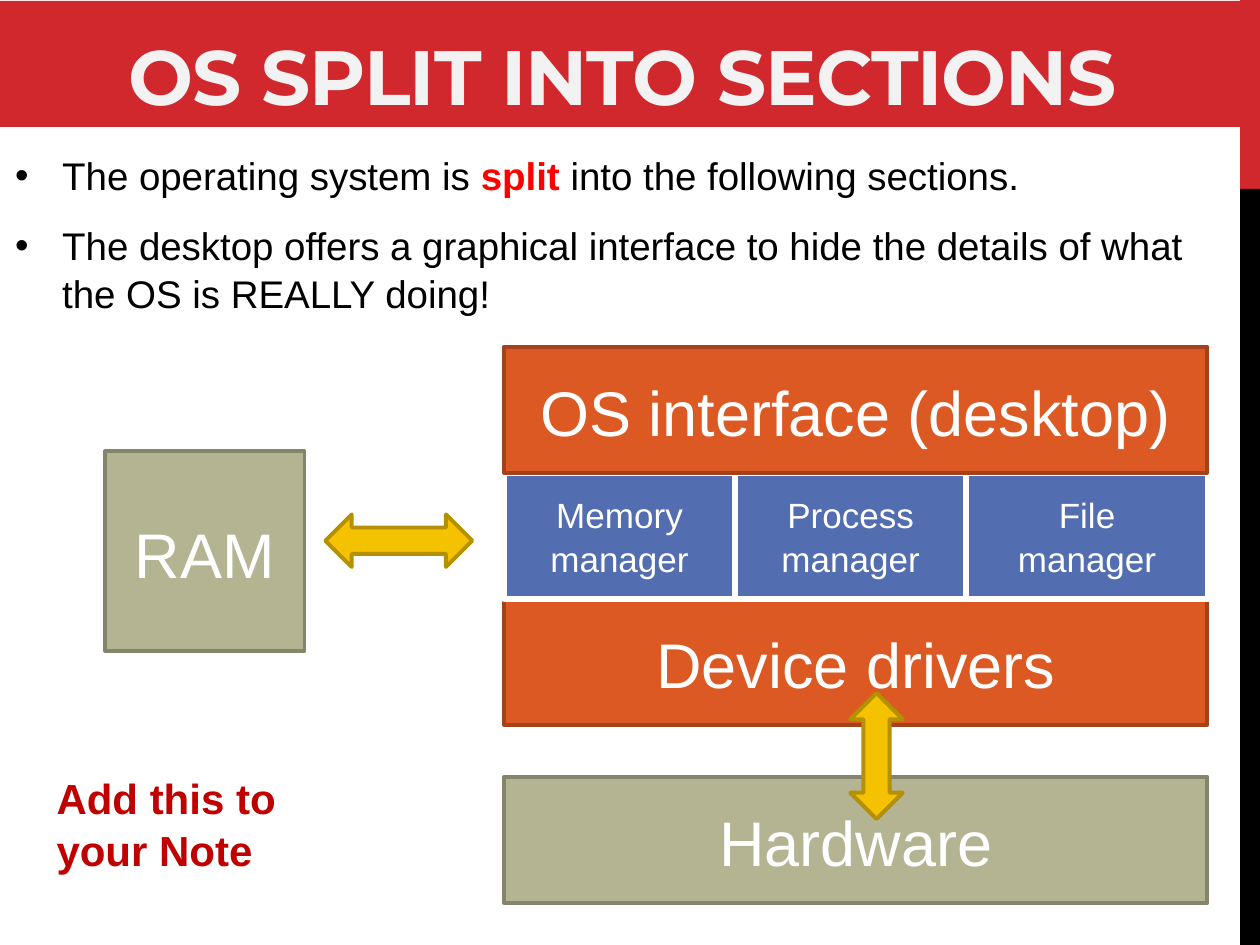
from pptx import Presentation
from pptx.dml.color import RGBColor
from pptx.enum.shapes import MSO_SHAPE
from pptx.enum.text import MSO_ANCHOR, MSO_AUTO_SIZE, PP_ALIGN
from pptx.util import Cm, Pt

RECT = MSO_SHAPE.RECTANGLE
ARROW = MSO_SHAPE.LEFT_RIGHT_ARROW
CENTER, LEFT = PP_ALIGN.CENTER, PP_ALIGN.LEFT
MIDDLE, TOP, BOTTOM = MSO_ANCHOR.MIDDLE, MSO_ANCHOR.TOP, MSO_ANCHOR.BOTTOM
NO_FIT = MSO_AUTO_SIZE.NONE

COLORS = {
    "red": "D1282E", "black": "000000", "white": "FFFFFF", "title": "F2F2F2",
    "split": "FF0000", "note": "C00000",
    "sage": "B4B392", "sage_line": "85846C",
    "orange": "DC5924", "orange_line": "A3421B",
    "blue": "526DB0", "gold": "F5C201", "gold_line": "B59001",
}

# Stack of operating system layers, in cm
STACK_X, STACK_Y, STACK_W, ROW_H = 10.16, 6.99, 14.18, 2.54
MANAGER_W = 4.66


def rgb(name):
    return RGBColor.from_string(COLORS[name])


def place(sp, x, y, w, h):
    sp.left, sp.top, sp.width, sp.height = Cm(x), Cm(y), Cm(w), Cm(h)


def add_run(p, text, size, color, bold=False, font="Arial"):
    r = p.add_run()
    r.text = text
    r.font.size, r.font.name, r.font.bold = Pt(size), font, bold
    r.font.color.rgb = rgb(color)
    return r


def add_paragraph(tf, first, align=LEFT, after=0, spacing=1.05):
    p = tf.paragraphs[0] if first else tf.add_paragraph()
    p.alignment = align
    p.line_spacing = spacing
    p.space_before, p.space_after = Pt(0), Pt(after)
    return p


def add_box(s, at, fill, line=None, lines=(), size=36, line_width=2.25, kind=RECT):
    sp = s.shapes.add_shape(kind, *[Cm(v) for v in at])
    sp.shadow.inherit = False
    sp.fill.solid()
    sp.fill.fore_color.rgb = rgb(fill)
    if line:
        sp.line.color.rgb = rgb(line)
        sp.line.width = Pt(line_width)
    else:
        sp.line.fill.background()
    tf = sp.text_frame
    tf.word_wrap, tf.vertical_anchor = True, MIDDLE
    for i, text in enumerate(lines):
        add_run(add_paragraph(tf, i == 0, CENTER), text, size, "white")
    return sp


def add_title(s, text):
    sp = s.shapes.title
    place(sp, 0, 0.02, 25.1, 2.54)
    sp.fill.solid()
    sp.fill.fore_color.rgb = rgb("red")
    tf = sp.text_frame
    tf.auto_size, tf.vertical_anchor = NO_FIT, BOTTOM
    p = add_paragraph(tf, True, CENTER, spacing=1.0)
    r = add_run(p, text, 44, "title", True, "Montserrat")
    r.font._element.set("spc", "-60")


def add_bullets(s, items):
    sp = s.placeholders[1]
    place(sp, 0.05, 2.9, 25.04, 3.5)
    tf = sp.text_frame
    tf.auto_size, tf.vertical_anchor = NO_FIT, TOP
    for i, runs in enumerate(items):
        p = add_paragraph(tf, i == 0, after=12)
        pPr = p._p.get_or_add_pPr()
        pPr.set("marL", str(Cm(0.95)))
        pPr.set("indent", str(-Cm(0.95)))
        for text, color, bold in runs:
            add_run(p, text, 22, color, bold)


def add_note(s, text):
    tf = s.shapes.add_textbox(Cm(0.89), Cm(15.39), Cm(6.5), Cm(2.31)).text_frame
    tf.word_wrap = True
    add_run(add_paragraph(tf, True), text, 24, "note", True)


def main():
    prs = Presentation()
    prs.slide_width, prs.slide_height = Cm(25.4), Cm(19.05)
    s = prs.slides.add_slide(prs.slide_layouts[1])

    # Side bar, title and bullets
    add_box(s, (25, 0, 0.4, 3.81), "red")
    add_box(s, (25, 3.81, 0.4, 15.24), "black")
    add_title(s, "OS SPLIT INTO SECTIONS")
    add_bullets(s, [
        [("The operating system is ", "black", False),
         ("split", "split", True),
         (" into the following sections.", "black", False)],
        [("The desktop offers a graphical interface to hide the details "
          "of what the OS is REALLY doing!", "black", False)],
    ])

    # Hardware and the layers above it
    add_box(s, (STACK_X, 15.66, STACK_W, ROW_H), "sage", "sage_line", ["Hardware"])
    add_box(s, (STACK_X, STACK_Y + 2 * ROW_H, STACK_W, ROW_H),
            "orange", "orange_line", ["Device drivers"])
    managers = [["Memory manager"], ["Process", "manager"], ["File", "manager"]]
    for i, lines in enumerate(managers):
        width = 4.87 if i == 2 else MANAGER_W
        add_box(s, (STACK_X + i * MANAGER_W, STACK_Y + ROW_H, width, ROW_H),
                "blue", "white", lines, 20, 3.25)
    add_box(s, (STACK_X, STACK_Y, STACK_W, ROW_H),
            "orange", "orange_line", ["OS interface (desktop)"])

    # Memory and the two-way arrows
    add_box(s, (2.12, 9.1, 4.02, 4.02), "sage", "sage_line", ["RAM"])
    add_box(s, (6.56, 10.37, 2.96, 1.06), "gold", "gold_line", kind=ARROW)
    hardware_arrow = add_box(s, (16.4, 14.71, 2.54, 1.06), "gold", "gold_line",
                             kind=ARROW)
    hardware_arrow.rotation = 270

    add_note(s, "Add this to your Note")
    prs.save("out.pptx")


if __name__ == "__main__":
    main()
